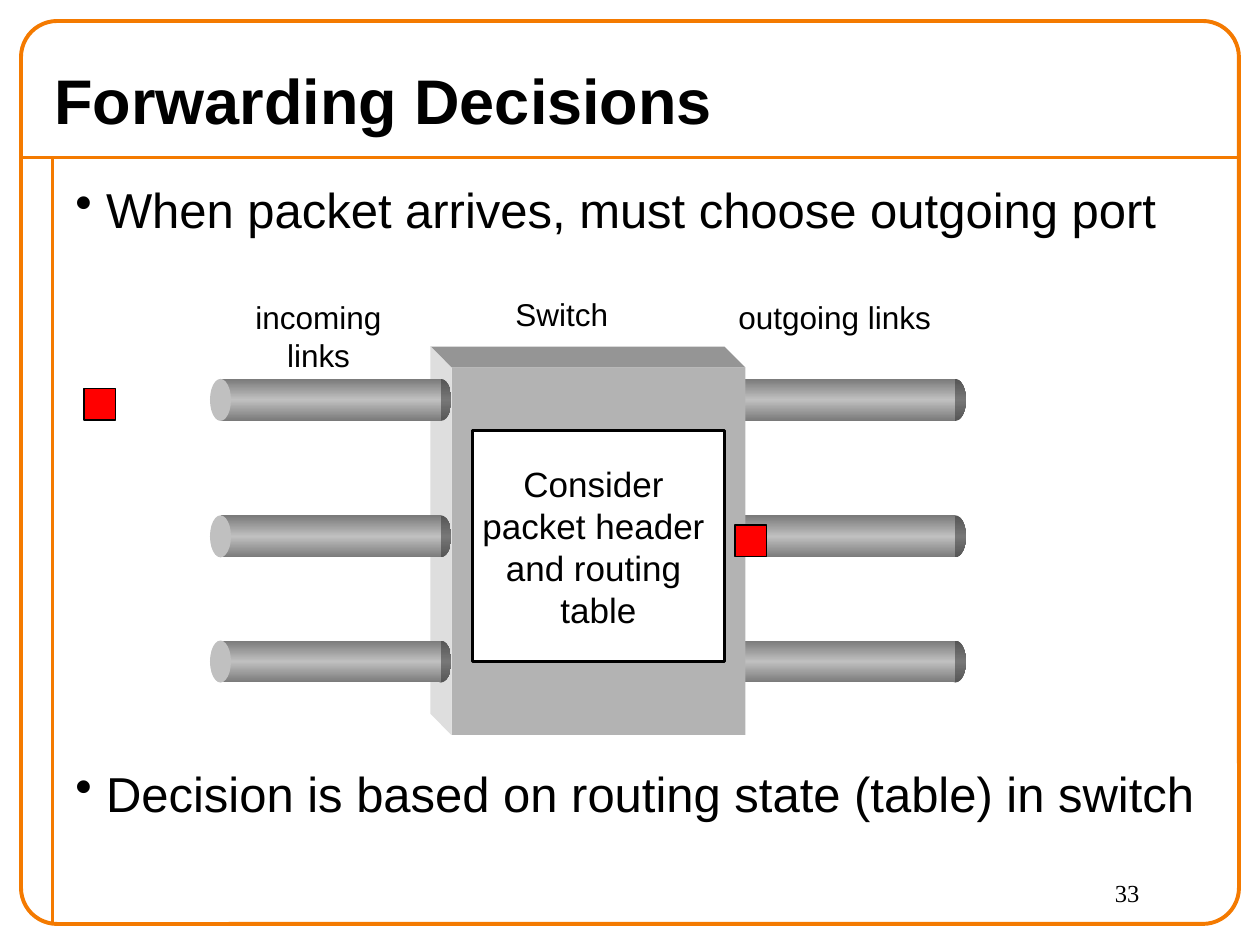
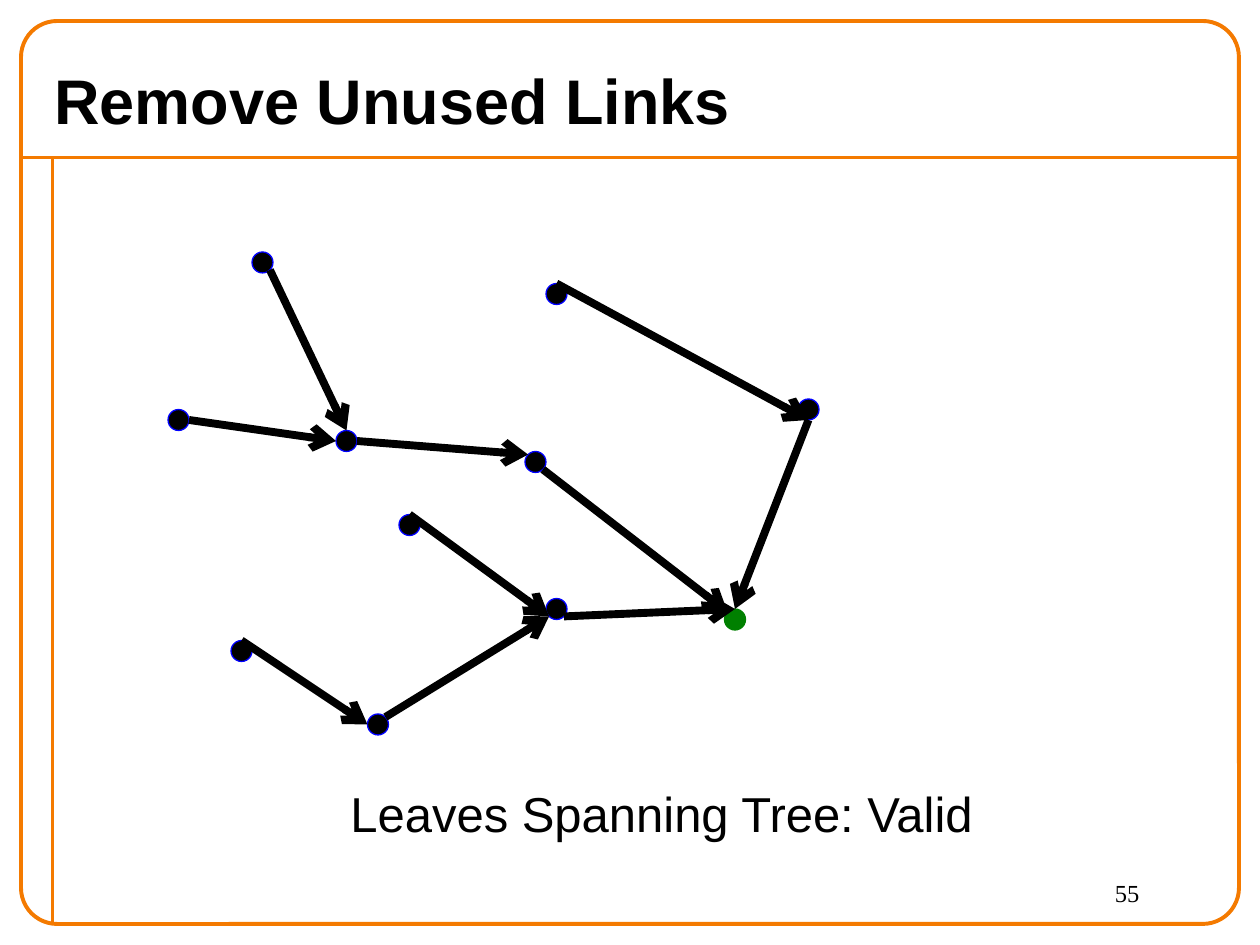
from copy import deepcopy
from math import cos, radians, sin

from pptx import Presentation
from pptx.dml.color import RGBColor
from pptx.enum.shapes import MSO_CONNECTOR as Connector, MSO_SHAPE as Preset
from pptx.enum.text import MSO_ANCHOR as Anchor, PP_ALIGN as Align
from pptx.oxml.ns import qn
from pptx.util import Pt

ORANGE = RGBColor(0xF4, 0x7A, 0x00)
BLACK = RGBColor(0x00, 0x00, 0x00)
WHITE = RGBColor(0xFF, 0xFF, 0xFF)
RED = RGBColor(0xFF, 0x00, 0x00)
BLUE = RGBColor(0x00, 0x00, 0xFF)
GREEN = RGBColor(0x00, 0x80, 0x00)
PIPE_EDGE = RGBColor(0x7A, 0x7A, 0x7A)
PIPE_LIGHT = RGBColor(0xC0, 0xC0, 0xC0)
CAP_EDGE = RGBColor(0x55, 0x55, 0x55)
CAP_LIGHT = RGBColor(0x77, 0x77, 0x77)
SWITCH_FRONT = RGBColor(0xB3, 0xB3, 0xB3)
SWITCH_TOP = RGBColor(0x95, 0x95, 0x95)
SWITCH_SIDE = RGBColor(0xDE, 0xDE, 0xDE)

# Fonts by role
TITLE = {"name": "Arial", "size": Pt(36), "bold": True}
BODY = {"name": "Arial", "size": Pt(28)}
DECISION = {"name": "Arial", "size": Pt(20)}
LABEL = {"name": "Arial", "size": Pt(18)}
PAGE_NUMBER = {"name": "Times New Roman", "size": Pt(14)}

# Forwarding slide; boxes are left, top, width, height in points
FORWARDING_POINTS = [
    "When packet arrives, must choose outgoing port",
    "Decision is based on routing state (table) in switch",
]
DIAGRAM_GAP = 300
BULLET_INDENT = 17.5
LINK_LABELS = [
    ("incoming links", (134, 170.5, 96, 44)),
    ("Switch", (291, 168.5, 60, 22)),
    ("outgoing links", (417, 170.5, 120, 22)),
]
DECISION_LINES = ["Consider ", "packet header ", "and routing ", "table"]
DECISION_BOX = (270, 246, 144, 132)
SWITCH_BOX = (258, 210, 168, 210)
SWITCH_DEPTH = 12
INCOMING_LEFT, OUTGOING_LEFT = 120, 414
PIPE_TOPS = [216.5, 294.5, 366]
PIPE_LENGTH, PIPE_HEIGHT, CAP_WIDTH = 126, 24, 12
PACKET_SIZE = 18
PACKETS = [(48, 222), (420, 300)]

# Spanning tree slide: left and top of each node, links as (node, side) pairs
NODE_SIZE = 12
NODES = {
    "A": (144, 144), "B": (96, 234), "C": (312, 162), "D": (312, 342),
    "E": (210, 408), "F": (192, 246), "G": (456, 228), "H": (228, 294),
    "I": (132, 366), "J": (300, 258), "root": (414, 348),
}
SIDE_ANGLES = {
    "right": 0, "bottom right": 45, "bottom": 90, "bottom left": 135,
    "left": 180, "top left": 225, "top": 270, "top right": 315,
}
TREE_LINKS = [
    (("A", "bottom right"), ("F", "top")),
    (("J", "bottom right"), ("root", "top left")),
    (("C", "top"), ("G", "bottom")),
    (("G", "bottom"), ("root", "top")),
    (("I", "top"), ("E", "left")),
    (("H", "top"), ("D", "bottom left")),
    (("D", "bottom right"), ("root", "top")),
    (("F", "right"), ("J", "top left")),
    (("B", "right"), ("F", "left")),
    (("E", "top right"), ("D", "bottom left")),
]
TREE_CAPTION = "Leaves Spanning Tree: Valid"


def points(values):
    return [Pt(value) for value in values]


def paint(shape, fill=None, line=None, width=0.75):
    shape.shadow.inherit = False
    if fill is None:
        shape.fill.background()
    else:
        shape.fill.solid()
        shape.fill.fore_color.rgb = fill
    if line is None:
        shape.line.fill.background()
    else:
        shape.line.color.rgb = line
        shape.line.width = Pt(width)
    return shape


def add_preset(slide, preset, box, fill=None, line=None, width=0.75):
    return paint(slide.shapes.add_shape(preset, *points(box)), fill, line, width)


def shade(shape, edge, light):
    """Blend vertically from edge to light and back to edge."""
    shape.fill.gradient()
    shape.fill.gradient_angle = 90
    for stop, color, position in zip(shape.fill.gradient_stops, (edge, light), (0, 0.5)):
        stop.color.rgb = color
        stop.position = position
    stops = shape.element.spPr.find(".//" + qn("a:gsLst"))
    last = deepcopy(stops[0])
    last.set("pos", "100000")
    stops.append(last)


def add_polygon(slide, corners, fill):
    corners = [points(corner) for corner in corners]
    builder = slide.shapes.build_freeform(*corners[0])
    builder.add_line_segments(corners[1:], close=True)
    paint(builder.convert_to_shape(), fill)


def write(frame, lines, font, align=Align.LEFT):
    for index, line in enumerate(lines):
        paragraph = frame.add_paragraph() if index else frame.paragraphs[0]
        paragraph.alignment = align
        run = paragraph.add_run()
        run.text = line
        run.font.color.rgb = BLACK
        for key, value in font.items():
            setattr(run.font, key, value)


def add_text(slide, box, lines, font, align=Align.LEFT, **frame_format):
    frame = slide.shapes.add_textbox(*points(box)).text_frame
    for key, value in {"word_wrap": True, **frame_format}.items():
        setattr(frame, key, value)
    write(frame, lines, font, align)
    return frame


def add_line(slide, start, end, color, width, arrow=False):
    line = slide.shapes.add_connector(Connector.STRAIGHT, *points((*start, *end)))
    line.line.color.rgb = color
    line.line.width = Pt(width)
    properties = line._element.spPr
    if arrow:
        outline = properties.find(qn("a:ln"))
        tip = outline.makeelement(qn("a:tailEnd"), {"type": "arrow"})
        outline.append(tip)
    properties.append(properties.makeelement(qn("a:effectLst"), {}))


def start_slide(deck, title, number):
    """Add a slide with the shared frame, title and page number."""
    slide = deck.slides.add_slide(deck.slide_layouts[6])
    add_line(slide, (12, 90), (708, 90), ORANGE, 2.25)
    add_line(slide, (30, 90), (30, 528), ORANGE, 2.25)
    frame = add_preset(slide, Preset.ROUNDED_RECTANGLE, (12, 12, 696, 516),
                       line=ORANGE, width=2.25)
    frame.adjustments[0] = 0.04
    add_text(slide, (24, 30, 635, 54), [title], TITLE, vertical_anchor=Anchor.MIDDLE)
    add_text(slide, (630, 498, 72, 30), [str(number)], PAGE_NUMBER)
    return slide


def add_bullets(slide):
    frame = add_text(slide, (36, 99, 666, 420), FORWARDING_POINTS, BODY)
    frame.paragraphs[1].space_before = Pt(DIAGRAM_GAP)
    for paragraph in frame.paragraphs:
        properties = paragraph._p.get_or_add_pPr()
        properties.set("marL", str(Pt(BULLET_INDENT)))
        properties.set("indent", str(-Pt(BULLET_INDENT)))
        properties.append(properties.makeelement(qn("a:buChar"), {"char": "•"}))


def add_pipe(slide, left, top):
    far_cap, tube, near_cap = [
        add_preset(slide, preset, (x, top, width, PIPE_HEIGHT), PIPE_LIGHT)
        for preset, x, width in (
            (Preset.OVAL, left + PIPE_LENGTH, CAP_WIDTH),
            (Preset.RECTANGLE, left + CAP_WIDTH / 2, PIPE_LENGTH),
            (Preset.OVAL, left, CAP_WIDTH),
        )
    ]
    shade(far_cap, CAP_EDGE, CAP_LIGHT)
    shade(tube, PIPE_EDGE, PIPE_LIGHT)


def add_switch(slide):
    left, top, width, height = SWITCH_BOX
    right, bottom = left + width, top + height
    back_left, back_top = left - SWITCH_DEPTH, top - SWITCH_DEPTH
    add_preset(slide, Preset.RECTANGLE, SWITCH_BOX, SWITCH_FRONT)
    add_polygon(slide, [(back_left, back_top), (right - SWITCH_DEPTH, back_top),
                        (right, top), (left, top)], SWITCH_TOP)
    add_polygon(slide, [(back_left, back_top), (left, top), (left, bottom),
                        (back_left, bottom - SWITCH_DEPTH)], SWITCH_SIDE)


def build_forwarding(deck):
    slide = start_slide(deck, "Forwarding Decisions", 33)
    add_bullets(slide)
    for top in PIPE_TOPS:
        add_pipe(slide, OUTGOING_LEFT, top)
    add_switch(slide)
    for top in PIPE_TOPS:
        add_pipe(slide, INCOMING_LEFT, top)
    no_margins = dict.fromkeys(
        ("margin_left", "margin_top", "margin_right", "margin_bottom"), 0)
    for label, box in LINK_LABELS:
        add_text(slide, box, [label], LABEL, Align.CENTER, **no_margins)
    for left, top in PACKETS:
        add_preset(slide, Preset.RECTANGLE, (left, top, PACKET_SIZE, PACKET_SIZE), RED, BLACK)
    decision = add_preset(slide, Preset.RECTANGLE, DECISION_BOX, WHITE, BLACK, 2).text_frame
    decision.word_wrap = False
    decision.vertical_anchor = Anchor.MIDDLE
    write(decision, DECISION_LINES, DECISION, Align.CENTER)


def node_edge(node, side):
    """Return the point on the rim of a node at the named side."""
    radius = NODE_SIZE / 2
    left, top = NODES[node]
    angle = radians(SIDE_ANGLES[side])
    return left + radius * (1 + cos(angle)), top + radius * (1 + sin(angle))


def build_spanning_tree(deck):
    slide = start_slide(deck, "Remove Unused Links", 55)
    for node, (left, top) in NODES.items():
        fill, line = (GREEN, GREEN) if node == "root" else (BLACK, BLUE)
        add_preset(slide, Preset.OVAL, (left, top, NODE_SIZE, NODE_SIZE), fill, line)
    for start, end in TREE_LINKS:
        add_line(slide, node_edge(*start), node_edge(*end), BLACK, 4.5, arrow=True)
    add_text(slide, (144, 444, 468, 41), [TREE_CAPTION], BODY, Align.CENTER)


def main():
    deck = Presentation()
    deck.slide_width, deck.slide_height = Pt(720), Pt(540)
    build_forwarding(deck)
    build_spanning_tree(deck)
    deck.save("out.pptx")


if __name__ == "__main__":
    main()
